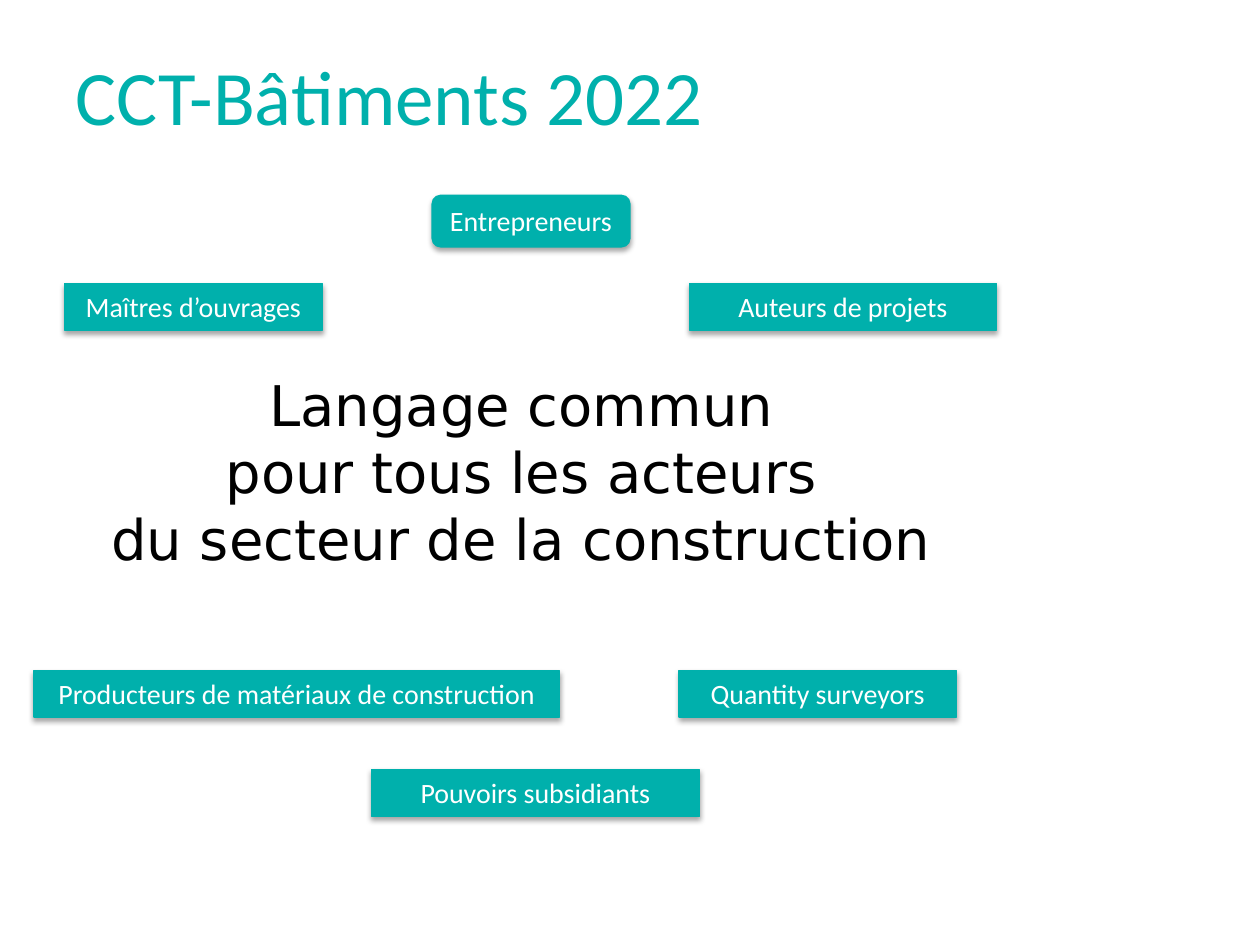
from dataclasses import dataclass

from lxml import etree
from pptx import Presentation
from pptx import util as u
from pptx.dml.color import RGBColor
from pptx.enum import shapes, text
from pptx.oxml import ns


@dataclass(frozen=True)
class Theme:
    """Colours, fonts and type sizes of the slide."""
    teal: str = "00B0AC"
    black: str = "000000"
    white: str = "FFFFFF"
    label_font: str = "Calibri"
    message_font: str = "DejaVu Sans"
    title_size: int = 44
    message_size: int = 32
    label_size: int = 16


THEME = Theme()
WIDTH, HEIGHT = u.Inches(10), u.Inches(7.5)
COLUMNS, ROWS = 100, 75
LABEL_ROWS = 3.7
UPPER_ROW, LOWER_ROW = 22.5, 53.2
RECTANGLE = shapes.MSO_SHAPE.RECTANGLE
ROUNDED = shapes.MSO_SHAPE.ROUNDED_RECTANGLE

ACTORS = [
    ("Maîtres d’ouvrages", RECTANGLE, (5.1, UPPER_ROW, 20.5, LABEL_ROWS)),
    ("Pouvoirs subsidiants", RECTANGLE, (29.5, 61.1, 26, LABEL_ROWS)),
    ("Auteurs de projets", RECTANGLE, (54.7, UPPER_ROW, 24.4, LABEL_ROWS)),
    ("Entrepreneurs", ROUNDED, (34.3, 15.5, 15.7, 4.1)),
    ("Producteurs de matériaux de construction", RECTANGLE,
     (2.7, LOWER_ROW, 41.7, LABEL_ROWS)),
    ("Quantity surveyors", RECTANGLE, (53.9, LOWER_ROW, 22, LABEL_ROWS)),
]
MESSAGE = ["Langage commun ", "pour tous les acteurs ", "du secteur de la construction "]


def grid_box(column, row, columns, rows):
    """Turn grid columns and rows into left, top, width and height."""
    return (round(WIDTH * column / COLUMNS), round(HEIGHT * row / ROWS),
            round(WIDTH * columns / COLUMNS), round(HEIGHT * rows / ROWS))


def write_text(shape, lines, *, font, size, color, align=text.PP_ALIGN.CENTER,
               anchor=text.MSO_ANCHOR.TOP):
    """Write lines as formatted paragraphs in a shape."""
    frame = shape.text_frame
    frame.word_wrap = True
    frame.vertical_anchor = anchor
    frame.text = "\n".join(lines)
    for paragraph in frame.paragraphs:
        paragraph.alignment = align
        run_font = paragraph.runs[0].font
        run_font.name = font
        run_font.size = u.Pt(size)
        run_font.color.rgb = RGBColor.from_string(color)


def add_soft_shadow(shape):
    """Give a shape a soft shadow that falls straight down."""
    shape.shadow.inherit = False
    effects = shape.element.spPr.find(ns.qn("a:effectLst"))
    shadow = etree.SubElement(effects, ns.qn("a:outerShdw"), blurRad=str(u.Pt(3.1)),
                              dist=str(u.Pt(1.8)), dir="5400000", rotWithShape="0")
    color = etree.SubElement(shadow, ns.qn("a:srgbClr"), val=THEME.black)
    etree.SubElement(color, ns.qn("a:alpha"), val="35000")


def place_title(slide, box):
    """Place the slide title in its placeholder."""
    title = slide.shapes.title
    title.left, title.top, title.width, title.height = box
    write_text(title, ["CCT-Bâtiments 2022"], font=THEME.label_font,
               size=THEME.title_size, color=THEME.teal,
               align=text.PP_ALIGN.LEFT, anchor=text.MSO_ANCHOR.MIDDLE)


def place_message(slide, box):
    """Place the central message."""
    message = slide.shapes.add_textbox(*box)
    write_text(message, MESSAGE, font=THEME.message_font,
               size=THEME.message_size, color=THEME.black)
    message.text_frame.auto_size = text.MSO_AUTO_SIZE.SHAPE_TO_FIT_TEXT


def place_actor(slide, name, outline, box):
    """Place the label of one actor in the building sector."""
    label = slide.shapes.add_shape(outline, *box)
    label.fill.solid()
    label.fill.fore_color.rgb = RGBColor.from_string(THEME.teal)
    label.line.color.rgb = RGBColor.from_string(THEME.teal)
    label.line.width = u.Pt(0.75)
    add_soft_shadow(label)
    write_text(label, [name], font=THEME.label_font,
               size=THEME.label_size, color=THEME.white)
    label.text_frame.auto_size = text.MSO_AUTO_SIZE.SHAPE_TO_FIT_TEXT


def main():
    """Build and save the presentation."""
    presentation = Presentation()
    presentation.slide_width, presentation.slide_height = WIDTH, HEIGHT
    slide = presentation.slides.add_slide(presentation.slide_layouts[5])
    place_title(slide, grid_box(5, 1.3, 77.2, 12.5))
    place_message(slide, grid_box(4.3, 28.9, 75.6, 17.2))
    for name, outline, cells in ACTORS:
        place_actor(slide, name, outline, grid_box(*cells))
    presentation.save("out.pptx")


if __name__ == "__main__":
    main()
